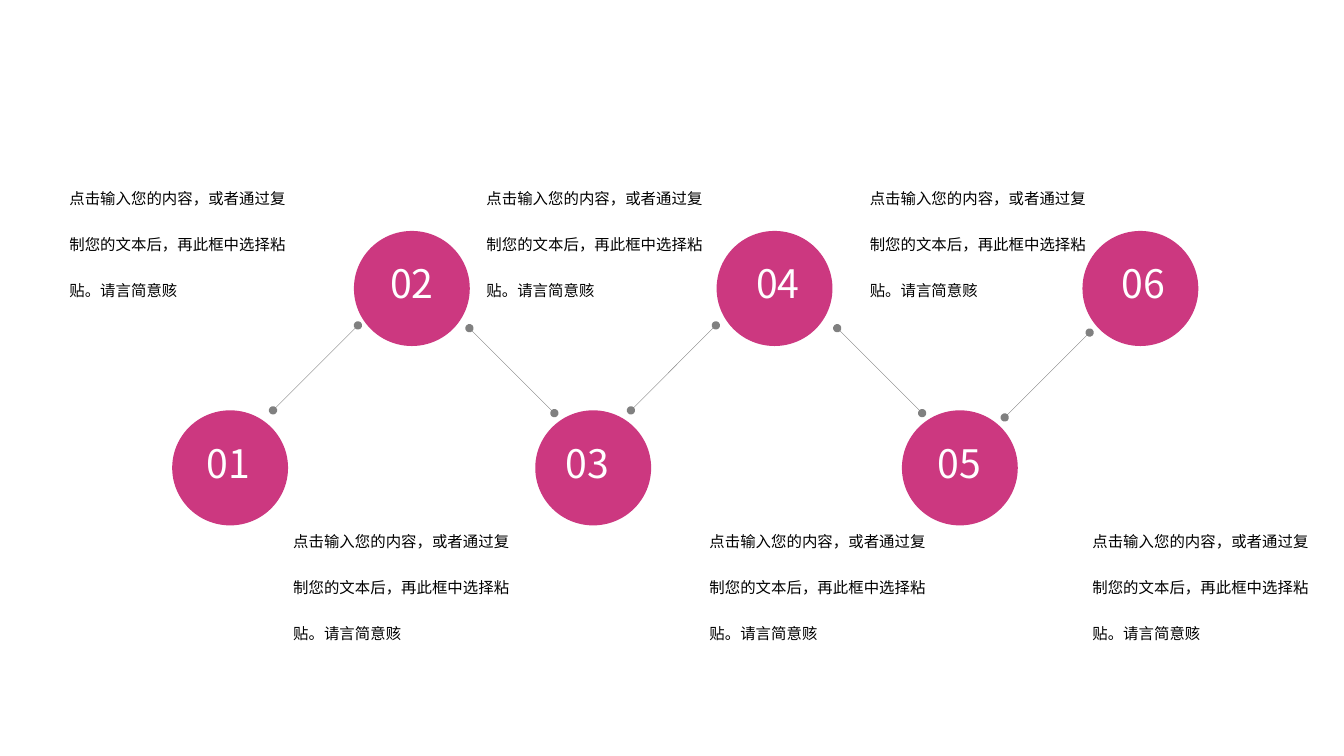
from lxml import etree
from pptx import Presentation
from pptx.dml.color import RGBColor
from pptx.enum.shapes import MSO_CONNECTOR, MSO_SHAPE
from pptx.enum.text import MSO_AUTO_SIZE, PP_ALIGN
from pptx.oxml.ns import qn
from pptx.util import Cm, Pt

STRAIGHT = MSO_CONNECTOR.STRAIGHT
OVAL = MSO_SHAPE.OVAL
GROW = MSO_AUTO_SIZE.SHAPE_TO_FIT_TEXT
CENTER = PP_ALIGN.CENTER
LEFT = PP_ALIGN.LEFT

MAGENTA = RGBColor(0xCC, 0x38, 0x80)
GRAY = RGBColor(0x80, 0x80, 0x80)
WHITE = RGBColor(0xFF, 0xFF, 0xFF)
BLACK = RGBColor(0x00, 0x00, 0x00)
FONT = "Noto Sans CJK SC"
NOTE = "点击输入您的内容，或者通过复制您的文本后，再此框中选择粘贴。请言简意赅"

# Lengths in cm. Odd steps sit in the lower row, even steps in the upper row.
CIRCLE_WIDTH, CIRCLE_HEIGHT = 2.92, 2.9
LOWER_TOP, UPPER_TOP = 10.34, 5.82
# Circle left, and the inset of its number
STEPS = [(4.34, 0.28), (8.92, 0.33), (13.49, 0.18),
         (18.06, 0.41), (22.73, 0.31), (27.28, 0.41)]
# Lower end of each link; it rises alternately to the right and to the left
LINK_FEET = [(6.88, 10.34), (13.97, 10.41), (15.9, 10.34),
             (23.24, 10.41), (25.32, 10.52)]
LINK_RISE = 2.14
NOTE_LEFTS = [1.5, 7.14, 12.01, 17.63, 21.67, 27.28]
UPPER_NOTE_TOP, LOWER_NOTE_TOP = 3.94, 12.58


def add_text(shapes, box, text, size, color, align=LEFT, spacing=1.0):
    text_box = shapes.add_textbox(*map(Cm, box))
    frame = text_box.text_frame
    frame.word_wrap = True
    frame.auto_size = GROW
    frame.text = text
    para = frame.paragraphs[0]
    para.alignment = align
    para.line_spacing = spacing
    font = para.runs[0].font
    font.size = Pt(size)
    font.name = FONT
    font.color.rgb = color
    east_asian = etree.SubElement(para.runs[0]._r.rPr, qn("a:ea"))
    east_asian.set("typeface", FONT)


def add_link(shapes, left, foot, run):
    """Draw a thin line with a dot at each end, rising from its foot."""
    link = shapes.add_connector(STRAIGHT, Cm(left), Cm(foot),
                                Cm(left + run), Cm(foot - LINK_RISE))
    link.line.color.rgb = GRAY
    link.line.width = Pt(0.25)
    outline = link.line._get_or_add_ln()
    for end in ("a:headEnd", "a:tailEnd"):
        etree.SubElement(outline, qn(end)).set("type", "oval")
    etree.SubElement(link._element.spPr, qn("a:effectLst"))


def add_step(shapes, left, top, label, inset):
    """Draw a circle with its number."""
    circle = shapes.add_shape(OVAL, Cm(left), Cm(top),
                              Cm(CIRCLE_WIDTH), Cm(CIRCLE_HEIGHT))
    circle.shadow.inherit = False
    circle.fill.solid()
    circle.fill.fore_color.rgb = MAGENTA
    circle.line.fill.background()
    add_text(shapes, (left + inset, top + 0.6, 2.26, 1.45), label,
             28, WHITE, CENTER)


def add_zigzag(page):
    shapes = page.shapes.add_group_shape().shapes
    for index, (left, foot) in enumerate(LINK_FEET):
        add_link(shapes, left, foot, -LINK_RISE if index % 2 else LINK_RISE)
    for index, (left, inset) in enumerate(STEPS):
        top = UPPER_TOP if index % 2 else LOWER_TOP
        add_step(shapes, left, top, f"{index + 1:02}", inset)


def add_notes(page):
    for index, left in enumerate(NOTE_LEFTS):
        top = LOWER_NOTE_TOP if index % 2 else UPPER_NOTE_TOP
        add_text(page.shapes, (left, top, 6.2, 3.58), NOTE,
                 11, BLACK, spacing=2.5)


def main():
    deck = Presentation()
    deck.slide_width, deck.slide_height = Cm(33.87), Cm(19.05)
    page = deck.slides.add_slide(deck.slide_layouts[6])
    add_zigzag(page)
    add_notes(page)
    deck.save("out.pptx")


if __name__ == "__main__":
    main()
